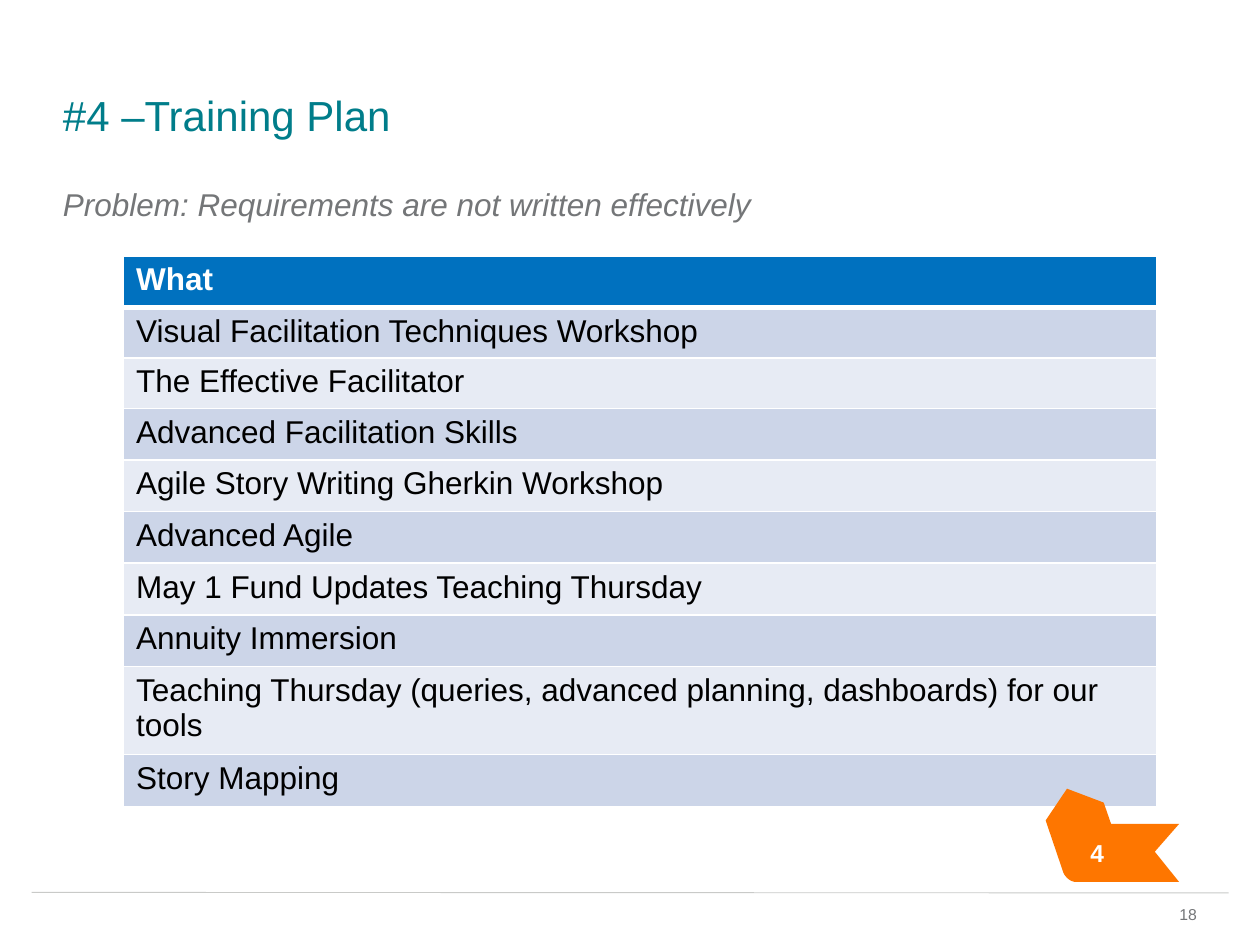
from lxml import etree
from pptx import Presentation
from pptx.dml.color import RGBColor
from pptx.enum.shapes import MSO_CONNECTOR
from pptx.enum.text import MSO_ANCHOR, PP_ALIGN
from pptx.oxml.ns import qn
from pptx.util import Cm, Pt

TOP, MIDDLE, BOTTOM = MSO_ANCHOR.TOP, MSO_ANCHOR.MIDDLE, MSO_ANCHOR.BOTTOM
LEFT, CENTER, RIGHT = PP_ALIGN.LEFT, PP_ALIGN.CENTER, PP_ALIGN.RIGHT

TEAL = RGBColor(0x00, 0x7D, 0x8A)
GREY = RGBColor(0x74, 0x76, 0x78)
RULE_GREY = RGBColor(0xC9, 0xCA, 0xC8)
BLUE = RGBColor(0x00, 0x71, 0xBF)
BAND_DARK = RGBColor(0xCC, 0xD5, 0xE8)
BAND_LIGHT = RGBColor(0xE7, 0xEB, 0xF4)
ORANGE = RGBColor(0xFE, 0x76, 0x00)
WHITE = RGBColor(0xFF, 0xFF, 0xFF)
BLACK = RGBColor(0x00, 0x00, 0x00)

TITLE = "#4 –Training Plan"
PROBLEM = "Problem: Requirements are not written effectively"
HEADER = "What"
TRAININGS = [
    "Visual Facilitation Techniques Workshop",
    "The Effective Facilitator",
    "Advanced Facilitation Skills",
    "Agile Story Writing Gherkin Workshop",
    "Advanced Agile",
    "May 1 Fund Updates Teaching Thursday",
    "Annuity Immersion",
    "Teaching Thursday (queries, advanced planning, dashboards) for our tools",
    "Story Mapping",
]
BADGE_NUMBER = "4"
PAGE_NUMBER = "18"

# All positions and sizes below are in centimetres.
TABLE_LEFT, TABLE_TOP, TABLE_WIDTH = 2.49, 5.16, 20.83
ROW_HEIGHT = 1.04
SHORT_ROWS = {1: 0.96, 2: 0.98}
BADGE_CORNER = [(21.69, 17.78), (21.59, 17.78), (21.49, 17.7), (21.44, 17.6)]
BADGE_EDGE = [(21.08, 16.54), (21.51, 15.9), (22.25, 16.18), (22.4, 16.61),
              (23.77, 16.61), (23.28, 17.17), (23.77, 17.78)]


def add_run(paragraph, text, size, color, bold=False, italic=False):
    run = paragraph.add_run()
    run.text = text
    font = run.font
    font.name, font.size = "Arial", Pt(size)
    font.bold, font.italic = bold, italic
    font.color.rgb = color


def add_text(slide, box, text, size, color, insets=(0, 0, 0, 0),
             anchor=TOP, align=LEFT, **style):
    """Add a one-paragraph text box; insets run left, top, right, bottom."""
    frame = slide.shapes.add_textbox(*map(Cm, box)).text_frame
    frame.word_wrap = True
    frame.vertical_anchor = anchor
    (frame.margin_left, frame.margin_top,
     frame.margin_right, frame.margin_bottom) = map(Cm, insets)
    paragraph = frame.paragraphs[0]
    paragraph.alignment = align
    add_run(paragraph, text, size, color, **style)
    return paragraph


def add_footer_rule(slide):
    rule = slide.shapes.add_connector(
        MSO_CONNECTOR.STRAIGHT, Cm(0.64), Cm(17.99), Cm(24.77), Cm(18))
    rule.line.color.rgb = RULE_GREY
    rule.line.width = Pt(0.5)
    etree.SubElement(rule._element.spPr, qn("a:effectLst"))


def set_borders(cell, bottom_width):
    """Put white borders around a cell, ahead of its fill in the XML."""
    properties = cell._tc.get_or_add_tcPr()
    widths = {"lnL": 1, "lnR": 1, "lnT": 1, "lnB": bottom_width}
    for position, (side, width) in enumerate(widths.items()):
        border = etree.Element(qn(f"a:{side}"), w=str(Pt(width)))
        fill = etree.SubElement(border, qn("a:solidFill"))
        etree.SubElement(fill, qn("a:srgbClr"), val=str(WHITE))
        properties.insert(position, border)


def add_training_table(slide):
    labels = [HEADER, *TRAININGS]
    table = slide.shapes.add_table(
        len(labels), 1, Cm(TABLE_LEFT), Cm(TABLE_TOP),
        Cm(TABLE_WIDTH), Cm(ROW_HEIGHT * len(labels))).table
    for index, label in enumerate(labels):
        is_header = index == 0
        table.rows[index].height = Cm(SHORT_ROWS.get(index, ROW_HEIGHT))
        cell = table.cell(index, 0)
        cell.fill.solid()
        band = BAND_DARK if index % 2 else BAND_LIGHT
        cell.fill.fore_color.rgb = BLUE if is_header else band
        set_borders(cell, bottom_width=3 if is_header else 1)
        add_run(cell.text_frame.paragraphs[0], label, 18,
                WHITE if is_header else BLACK, bold=is_header)


def bezier_points(controls, steps=8):
    """Sample a cubic curve, leaving out its start."""
    points = []
    for step in range(1, steps + 1):
        t = step / steps
        weights = ((1 - t) ** 3, 3 * t * (1 - t) ** 2, 3 * t * t * (1 - t), t ** 3)
        points.append(tuple(sum(w * c for w, c in zip(weights, axis))
                            for axis in zip(*controls)))
    return points


def add_badge(slide):
    outline = bezier_points(BADGE_CORNER) + BADGE_EDGE
    builder = slide.shapes.build_freeform(*map(Cm, BADGE_CORNER[0]))
    builder.add_line_segments([(Cm(x), Cm(y)) for x, y in outline], close=True)
    badge = builder.convert_to_shape()
    badge.shadow.inherit = False
    badge.fill.solid()
    badge.fill.fore_color.rgb = ORANGE
    badge.line.fill.background()
    add_text(slide, (21.72, 16.89, 0.8, 0.6), BADGE_NUMBER, 14, WHITE,
             anchor=MIDDLE, align=CENTER, bold=True)


def main():
    presentation = Presentation()
    presentation.slide_width, presentation.slide_height = Cm(25.4), Cm(19.05)
    slide = presentation.slides.add_slide(presentation.slide_layouts[6])

    add_footer_rule(slide)
    title = add_text(slide, (1.27, 1.27, 23.29, 1.55), TITLE, 24, TEAL,
                     insets=(0, 0.13, 0.25, 0), anchor=BOTTOM)
    title.line_spacing = Pt(26.8)
    problem = add_text(slide, (1.27, 3.61, 23.29, 1.2), PROBLEM, 18, GREY,
                       insets=(0, 0.13, 0.25, 0.13), italic=True)
    problem.space_before = Pt(2)
    add_text(slide, (22.43, 18.11, 1.7, 0.51), PAGE_NUMBER, 9, GREY,
             insets=(0.25, 0.13, 0, 0.13), align=RIGHT)
    add_training_table(slide)
    add_badge(slide)

    presentation.save("out.pptx")


if __name__ == "__main__":
    main()
